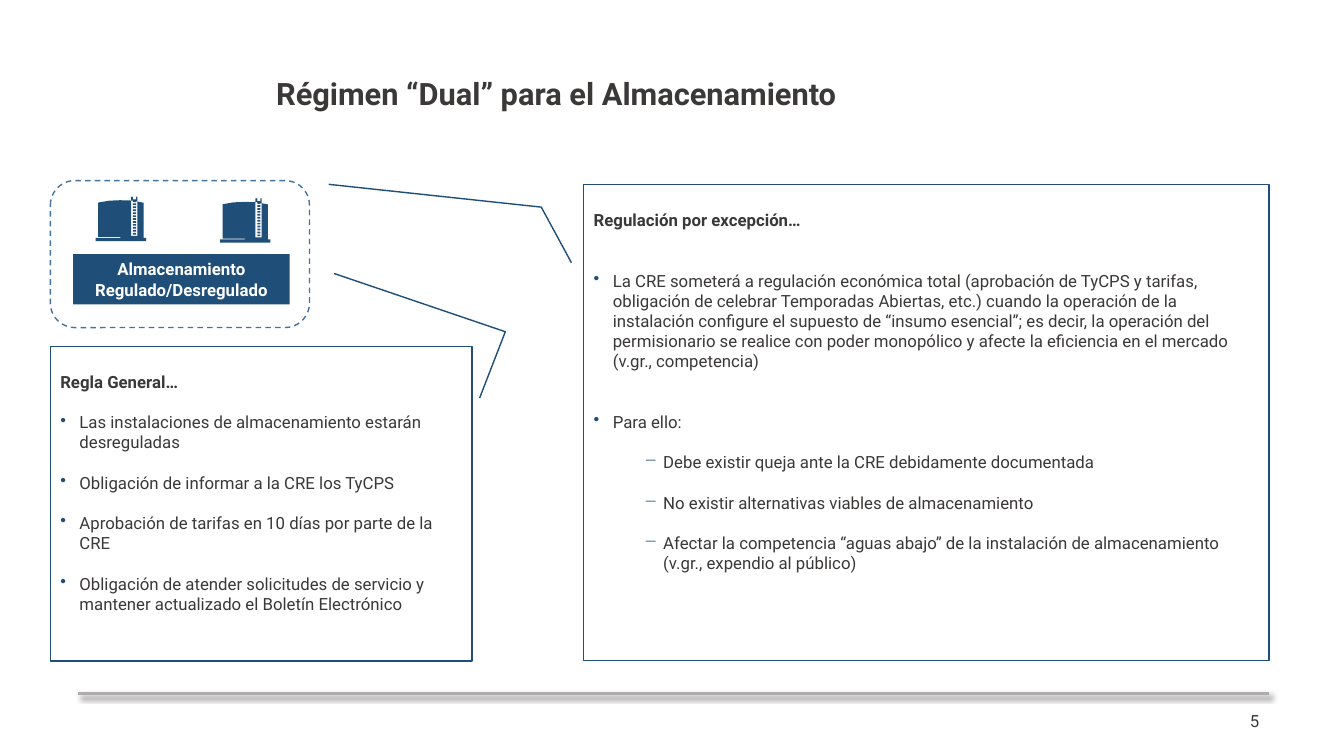
"""Build the slide on the dual regime for storage."""
from dataclasses import dataclass

from lxml import etree
from pptx import Presentation, util as u
from pptx.dml.color import RGBColor
from pptx.enum import dml, shapes, text
from pptx.oxml import ns


@dataclass(frozen=True)
class Theme:
    """Colours, font and type sizes."""
    ink: str = "3B3838"
    navy: str = "1F4E79"
    steel: str = "43739E"
    rule: str = "AFABAB"
    white: str = "FFFFFF"
    font: str = "Roboto"
    title: float = 22
    body: float = 12
    gap: float = 14.4


TANK_WALL = [(30, 72), (160, 50), (290, 44), (420, 48), (420, 468), (495, 468),
             (495, 60), (570, 74), (570, 492), (600, 492), (600, 530), (0, 530),
             (0, 492), (295, 492), (295, 480), (30, 480)]
LADDER_TOP = [(420, 48), (420, 6), (432, 0), (444, 6), (444, 34), (480, 34),
              (480, 6), (488, 0), (495, 6), (495, 58), (480, 58), (480, 48)]
RUNGS = [[(444, y), (480, y), (480, y + 20), (444, y + 20)]
         for y in range(48, 48 + 12 * 35, 35)]

LEVELS = {
    "head": {"bold": True},
    "point": {"mark": "•", "left": 0.19},
    "sub": {"mark": "−", "left": 0.69},
}
HANGING = -0.19

EXCEPTION = [
    ("head", 0, "Regulación por excepción…"),
    ("point", 2, "La CRE someterá a regulación económica total (aprobación de "
     "TyCPS y tarifas, obligación de celebrar Temporadas Abiertas, etc.) cuando "
     "la operación de la instalación configure el supuesto de “insumo "
     "esencial”; es decir, la operación del permisionario se realice con poder "
     "monopólico y afecte la eficiencia en el mercado (v.gr., competencia)"),
    ("point", 2, "Para ello:"),
    ("sub", 1, "Debe existir queja ante la CRE debidamente documentada"),
    ("sub", 1, "No existir alternativas viables de almacenamiento"),
    ("sub", 1, "Afectar la competencia “aguas abajo” de la instalación de "
     "almacenamiento (v.gr., expendio al público)"),
]
GENERAL_RULE = [
    ("head", 0, "Regla General…"),
    ("point", 1, "Las instalaciones de almacenamiento estarán desreguladas"),
    ("point", 1, "Obligación de informar a la CRE los TyCPS"),
    ("point", 1, "Aprobación de tarifas en 10 días por parte de la CRE"),
    ("point", 1, "Obligación de atender solicitudes de servicio y mantener "
     "actualizado el Boletín Electrónico"),
]


def assign(target, formats):
    """Set each format value on the target."""
    for name, value in formats.items():
        setattr(target, name, value)


def add_xml(parent, tag, **attributes):
    """Append a drawing element and return it."""
    return etree.SubElement(parent, ns.qn(tag), attributes)


class Deck:
    """Style and current slide, measured on a grid of 160 by 90 cells."""

    columns, rows = 160, 90

    def __init__(self, theme):
        """Open a blank slide."""
        self.theme = theme
        self.deck = Presentation()
        assign(self.deck, {"slide_width": u.Inches(13.333),
                           "slide_height": u.Inches(7.5)})
        self.slide = self.deck.slides.add_slide(self.deck.slide_layouts[6])

    def grid(self, *cells):
        """Turn alternating columns and rows into lengths."""
        units = (self.deck.slide_width / self.columns,
                 self.deck.slide_height / self.rows)
        return [u.Emu(round(n * units[i % 2])) for i, n in enumerate(cells)]

    def paint(self, shape, fill=None, line=None, width=1, dash=None):
        """Give a shape its fill and line and drop the shadow."""
        shape.shadow.inherit = False
        for part, colour in ((shape.fill, fill), (shape.line.fill, line)):
            if colour:
                part.solid()
                part.fore_color.rgb = RGBColor.from_string(colour)
            else:
                part.background()
        if line:
            assign(shape.line, {"width": u.Pt(width), "dash_style": dash})

    def typeset(self, paragraph, words, colour=None, size=None, bold=False, **formats):
        """Fill one paragraph with styled words."""
        paragraph.text = words
        assign(paragraph, formats)
        assign(paragraph.font, {"name": self.theme.font, "bold": bold,
                                "size": u.Pt(size or self.theme.body)})
        paragraph.font.color.rgb = RGBColor.from_string(colour or self.theme.ink)

    def bullet(self, paragraph, mark, left):
        """Give a paragraph a coloured mark and a hanging indent."""
        properties = paragraph._p.get_or_add_pPr()
        properties.set("marL", str(u.Inches(left)))
        properties.set("indent", str(u.Inches(HANGING)))
        colour = add_xml(properties, "a:buClr")
        add_xml(colour, "a:srgbClr", val=self.theme.navy)
        add_xml(properties, "a:buChar", char=mark)

    def caption(self, place, words, **formats):
        """Add a line of text centred on its height."""
        frame = self.slide.shapes.add_textbox(*self.grid(*place)).text_frame
        assign(frame, {"word_wrap": True,
                       "vertical_anchor": text.MSO_ANCHOR.MIDDLE})
        self.typeset(frame.paragraphs[0], words, **formats)

    def box(self, place, kind, lines=(), **look):
        """Add a preset shape with centred bold lines."""
        shape = self.slide.shapes.add_shape(kind, *self.grid(*place))
        self.paint(shape, **look)
        frame = shape.text_frame
        assign(frame, {"word_wrap": False,
                       "vertical_anchor": text.MSO_ANCHOR.MIDDLE})
        for i, words in enumerate(lines):
            paragraph = frame.add_paragraph() if i else frame.paragraphs[0]
            self.typeset(paragraph, words, self.theme.white, bold=True,
                         alignment=text.PP_ALIGN.CENTER)

    def callout(self, place, leader, items, mirrored=False):
        """Add a bordered callout with a heading and bullets."""
        shape = self.slide.shapes.add_shape(
            shapes.MSO_SHAPE.LINE_CALLOUT_2, *self.grid(*place))
        self.paint(shape, line=self.theme.navy)
        for i, share in enumerate(leader):
            shape.adjustments[i] = share
        if mirrored:
            shape._element.spPr.xfrm.set("flipH", "1")
        frame = shape.text_frame
        assign(frame, {"word_wrap": True, "margin_top": u.Inches(0.25),
                       "vertical_anchor": text.MSO_ANCHOR.TOP})
        for i, (level, gaps, words) in enumerate(items):
            paragraph = frame.add_paragraph() if i else frame.paragraphs[0]
            style = LEVELS[level]
            if "mark" in style:
                self.bullet(paragraph, **style)
            spacing = {"space_before": u.Pt(gaps * self.theme.gap)} if gaps else {}
            self.typeset(paragraph, words, bold=style.get("bold", False),
                         alignment=text.PP_ALIGN.LEFT, **spacing)

    def tank(self, column, row):
        """Draw a storage tank with a ladder."""
        cell = self.deck.slide_width / self.columns
        builder = self.slide.shapes.build_freeform(*TANK_WALL[0], scale=cell / 100)
        builder.add_line_segments(TANK_WALL[1:])
        for outline in [LADDER_TOP, *RUNGS]:
            builder.move_to(*outline[0])
            builder.add_line_segments(outline[1:])
        self.paint(builder.convert_to_shape(*self.grid(column, row)),
                   fill=self.theme.navy)

    def rule(self, *ends):
        """Draw the footer line with a soft shadow."""
        line = self.slide.shapes.add_connector(
            shapes.MSO_CONNECTOR.STRAIGHT, *self.grid(*ends))
        line.line.color.rgb = RGBColor.from_string(self.theme.rule)
        line.line.width = u.Pt(1.75)
        effects = add_xml(line._element.spPr, "a:effectLst")
        shadow = add_xml(effects, "a:outerShdw", blurRad=str(u.Pt(4)),
                         dist=str(u.Pt(3)), dir="2700000", algn="tl", rotWithShape="0")
        add_xml(add_xml(shadow, "a:srgbClr", val="000000"), "a:alpha", val="50000")


def main():
    """Compose the slide and save it."""
    theme = Theme()
    deck = Deck(theme)
    deck.rule(9.24, 82.56, 151.08, 82.56)
    deck.caption((31.7, 4.4, 119.5, 14), "Régimen “Dual” para el Almacenamiento",
                 size=theme.title, bold=True, line_spacing=0.9)
    deck.caption((129.4, 83.4, 21.7, 4.8), "5", alignment=text.PP_ALIGN.RIGHT)
    for corner in ((26.2, 23.6), (11.4, 23.4)):
        deck.tank(*corner)
    deck.box((8.7, 30.25, 25.8, 6), shapes.MSO_SHAPE.RECTANGLE,
             ("Almacenamiento", "Regulado/Desregulado"), fill=theme.navy)
    deck.box((6, 21.5, 30.85, 17.5), shapes.MSO_SHAPE.ROUNDED_RECTANGLE,
             line=theme.steel, dash=dml.MSO_LINE.DASH)
    deck.callout((69.5, 22, 81.6, 56.6),
                 (0.164, -0.018, 0.047, -0.062, -0.001, -0.372), EXCEPTION)
    deck.callout((6, 41.25, 50.2, 37.45),
                 (0.164, -0.018, -0.047, -0.079, -0.232, 0.327), GENERAL_RULE,
                 mirrored=True)
    deck.deck.save("out.pptx")


if __name__ == "__main__":
    main()
